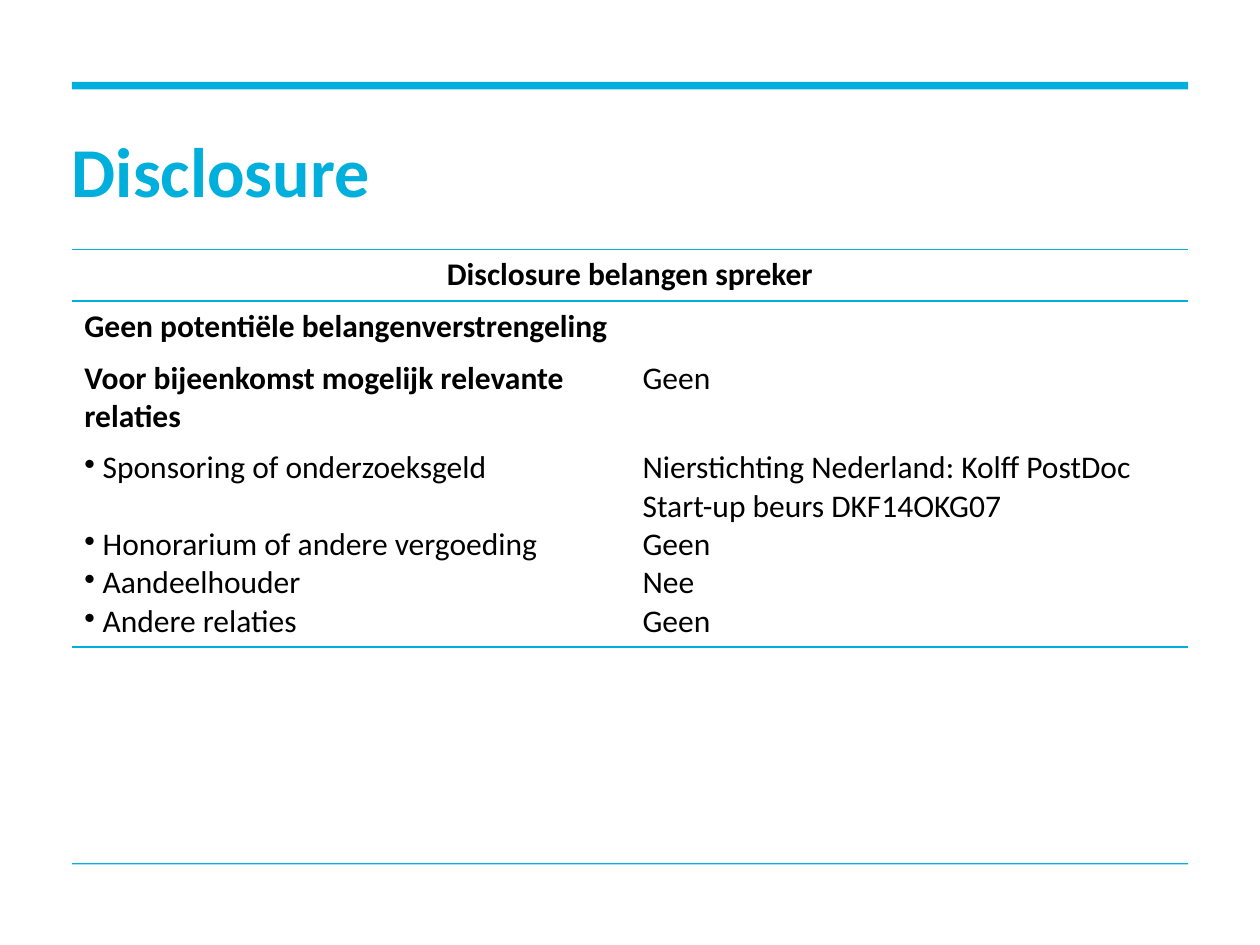
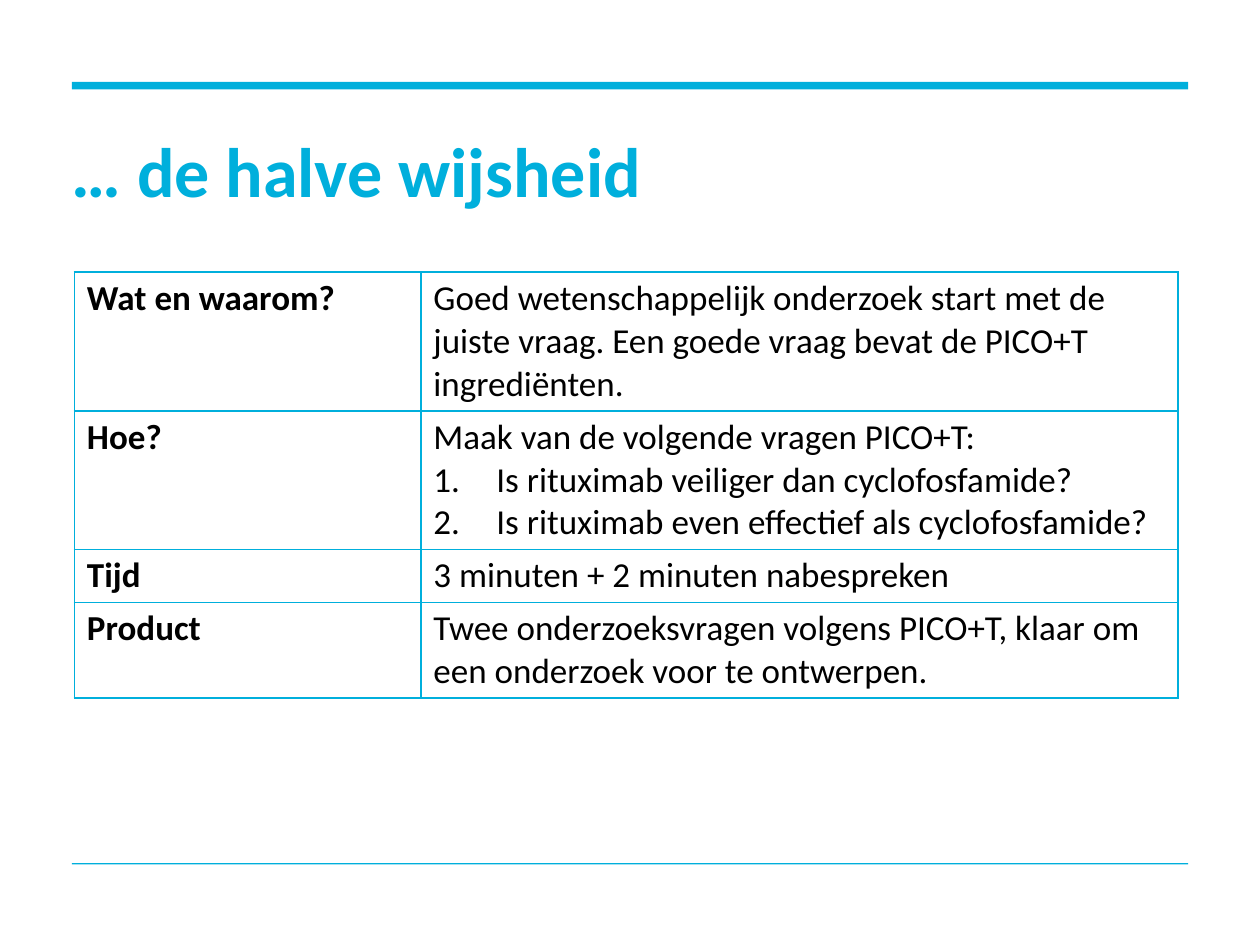
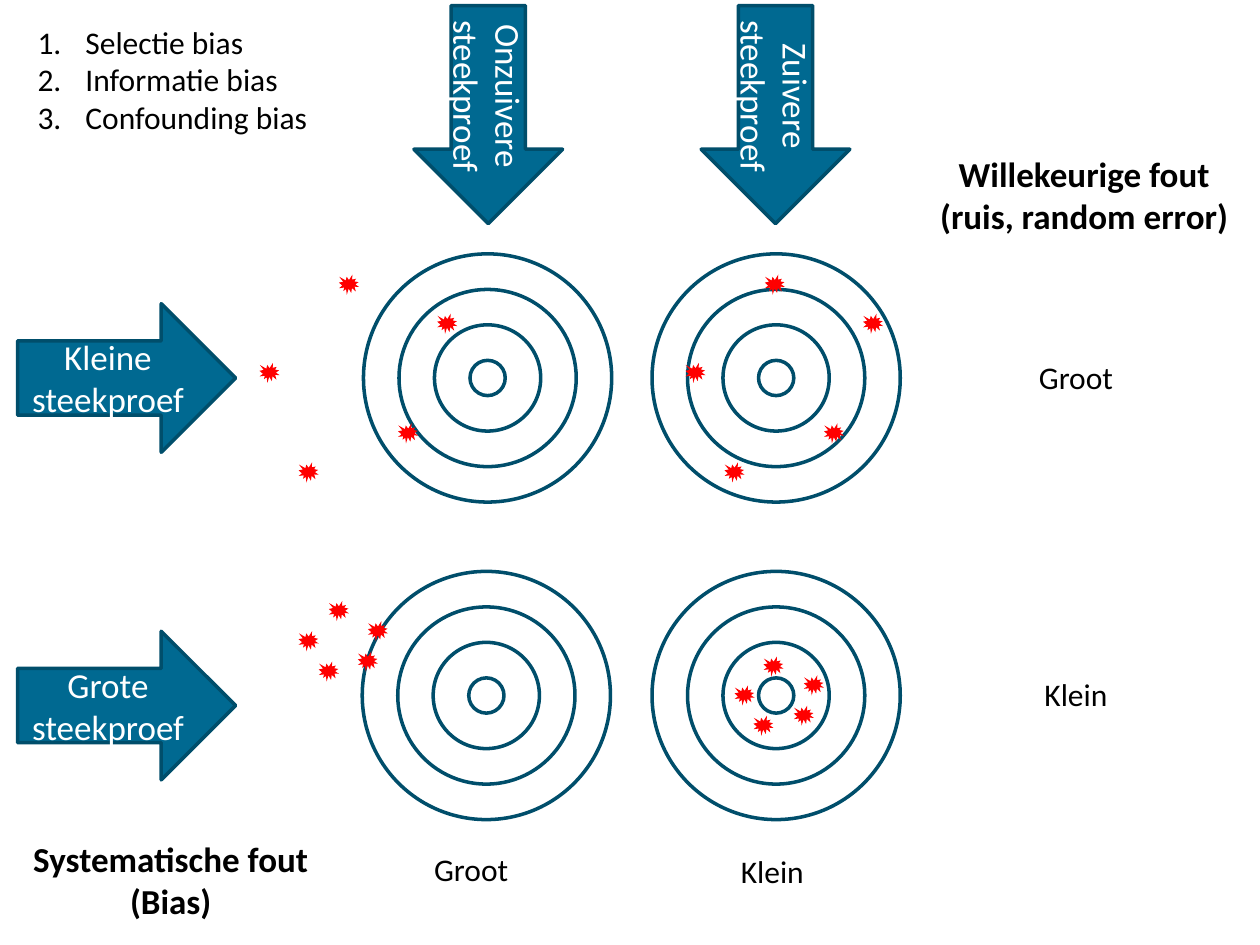
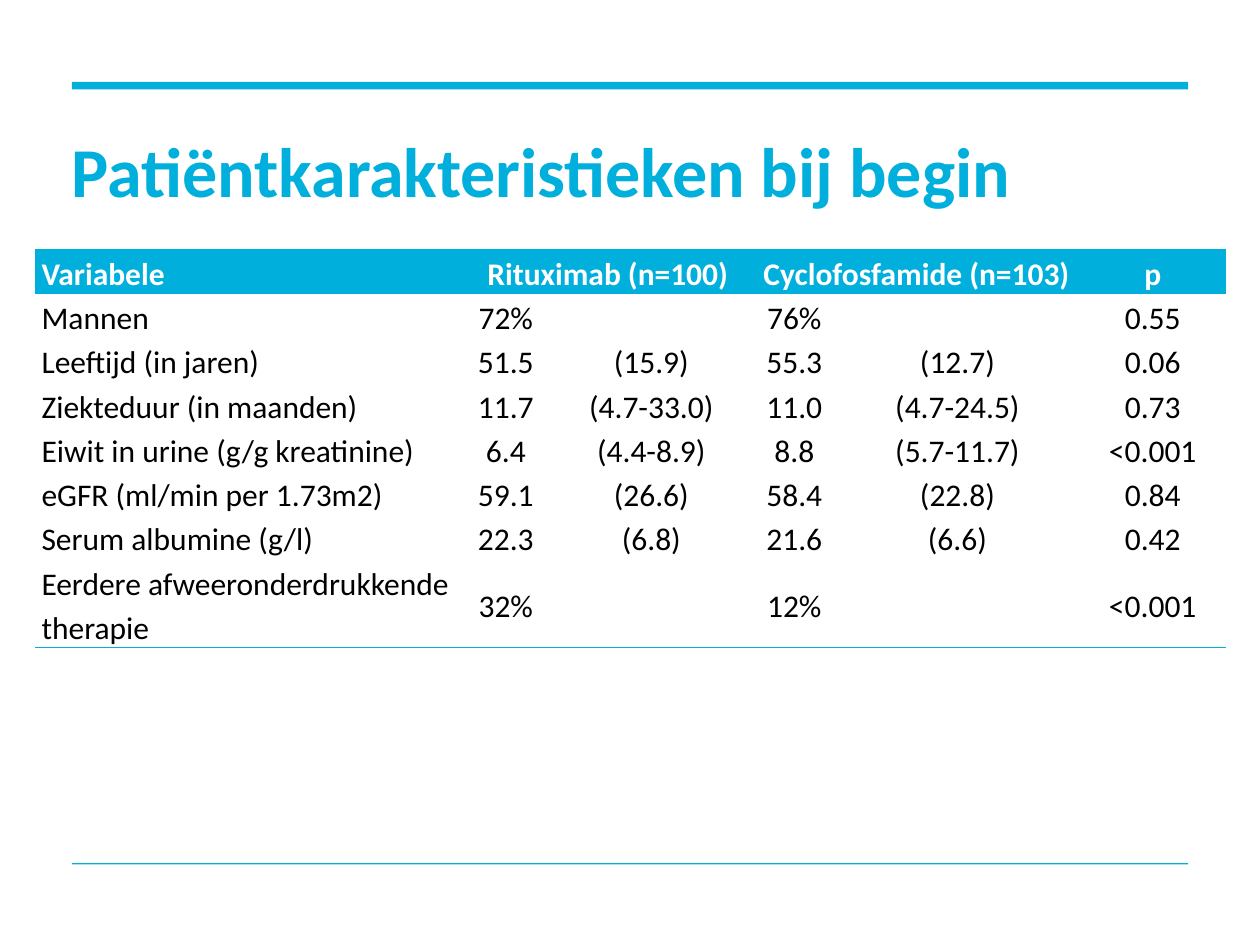
from pptx import Presentation
from pptx.dml.color import RGBColor
from pptx.enum.shapes import MSO_SHAPE
from pptx.enum.text import MSO_ANCHOR, MSO_AUTO_SIZE, PP_ALIGN
from pptx.oxml.ns import qn
from pptx.util import Inches, Pt
from lxml.etree import SubElement

FONT = "Calibri"
CYAN, TEAL, NAVY = "00AFDC", "006991", "004E6B"
RED, BLACK, WHITE = "FF0000", "000000", "FFFFFF"
MARGIN, CONTENT_WIDTH = 0.57, 8.86
TITLE_ONLY, BLANK = 5, 6
PLAIN_TABLE_STYLE = "{2D5ABB26-0587-4C30-8999-92F81FD0307C}"
SIDES = {"left": "a:lnL", "right": "a:lnR", "top": "a:lnT", "bottom": "a:lnB"}


def color(value):
    return RGBColor.from_string(value)


# Text
def set_marker(para, marker, indent):
    """Give a paragraph a bullet character, or numbers when marker is '1.'."""
    properties = para._p.get_or_add_pPr()
    properties.set("marL", str(Inches(indent)))
    properties.set("indent", str(-Inches(indent)))
    if marker == "1.":
        SubElement(properties, qn("a:buAutoNum")).set("type", "arabicPeriod")
    else:
        SubElement(properties, qn("a:buChar")).set("char", marker)


def write(frame, text, size=18, fill=BLACK, bold=False, align=PP_ALIGN.LEFT,
          spacing=None, after=None, marker=None, indent=0):
    """Write one paragraph, taking the empty first one if there is one."""
    para = frame.add_paragraph() if frame.text else frame.paragraphs[0]
    if marker:
        set_marker(para, marker, indent)
    para.alignment = align
    if spacing:
        para.line_spacing = spacing
    if after:
        para.space_after = after
    span = para.add_run()
    span.text = text
    span.font.name, span.font.size, span.font.bold = FONT, Pt(size), bold
    span.font.color.rgb = color(fill)


def add_text(page, left, top, width, height, lines, **style):
    box = page.shapes.add_textbox(Inches(left), Inches(top), Inches(width), Inches(height))
    frame = box.text_frame
    frame.word_wrap = True
    frame.auto_size = MSO_AUTO_SIZE.SHAPE_TO_FIT_TEXT
    for line in lines:
        write(frame, line, **style)


# Shapes
def add_shape(shapes, kind, left, top, width, height, fill=None, line=None):
    shape = shapes.add_shape(kind, Inches(left), Inches(top), Inches(width), Inches(height))
    shape.shadow.inherit = False
    if fill:
        shape.fill.solid()
        shape.fill.fore_color.rgb = color(fill)
    else:
        shape.fill.background()
    if line:
        shape.line.color.rgb = color(line)
        shape.line.width = Pt(2)
    else:
        shape.line.fill.background()
    return shape


def add_target(page, center_x, center_y):
    group = page.shapes.add_group_shape()
    for ring in range(4):
        size = 0.28 + ring * 1.69 / 3
        add_shape(group.shapes, MSO_SHAPE.OVAL, center_x - size / 2, center_y - size / 2,
                  size, size, line=NAVY)


def add_hits(page, spots):
    group = page.shapes.add_group_shape()
    for left, top in spots:
        add_shape(group.shapes, MSO_SHAPE.EXPLOSION1, left, top, 0.16, 0.16, fill=RED)


def add_arrow(page, left, top, text, rotation=0):
    arrow = add_shape(page.shapes, MSO_SHAPE.RIGHT_ARROW, left, top, 1.73, 1.18, TEAL, NAVY)
    arrow.rotation = rotation
    arrow.text_frame.word_wrap = True
    arrow.text_frame.vertical_anchor = MSO_ANCHOR.MIDDLE
    write(arrow.text_frame, text, size=20, fill=WHITE, align=PP_ALIGN.CENTER)


# Tables
def add_table(page, left, top, columns, rows):
    holder = page.shapes.add_table(len(rows), len(columns), Inches(left), Inches(top),
                                   Inches(sum(columns)), Inches(sum(rows)))
    table = holder.table
    table.first_row = table.horz_banding = False
    table._tbl.tblPr.find(qn("a:tableStyleId")).text = PLAIN_TABLE_STYLE
    for column, width in zip(table.columns, columns):
        column.width = Inches(width)
    for row, height in zip(table.rows, rows):
        row.height = Inches(height)
    return table


def fill_cell(cell, fill=None):
    if fill:
        cell.fill.solid()
        cell.fill.fore_color.rgb = color(fill)
    else:
        cell.fill.background()


def set_borders(cell, *sides):
    """Draw thin cyan edges; they must precede the fill in the cell."""
    properties = cell._tc.get_or_add_tcPr()
    for index, side in enumerate(name for name in SIDES if name in sides):
        edge = SubElement(properties, qn(SIDES[side]), w=str(Pt(1)))
        SubElement(SubElement(edge, qn("a:solidFill")), qn("a:srgbClr"), val=CYAN)
        properties.insert(index, edge)


# Pages
def add_titled_page(deck, text):
    page = deck.slides.add_slide(deck.slide_layouts[TITLE_ONLY])
    for top, height in ((0.65, 0.06), (6.85, 0.01)):
        add_shape(page.shapes, MSO_SHAPE.RECTANGLE, MARGIN, top, CONTENT_WIDTH, height, CYAN)
    title = page.shapes.title
    title.left, title.top = Inches(MARGIN), Inches(1.1)
    title.width, title.height = Inches(CONTENT_WIDTH), Inches(0.58)
    frame = title.text_frame
    frame.margin_left = frame.margin_right = frame.margin_top = frame.margin_bottom = 0
    frame.vertical_anchor = MSO_ANCHOR.MIDDLE
    frame.auto_size = MSO_AUTO_SIZE.NONE
    write(frame, text, size=40, fill=CYAN, bold=True, spacing=Pt(42))
    return page


def add_disclosure(deck):
    page = add_titled_page(deck, "Disclosure")
    table = add_table(page, MARGIN, 1.98, [4.43, 4.43], [0.41, 0.41, 0.71, 1.58])
    for cell in table.iter_cells():
        fill_cell(cell)
    for column in range(2):
        set_borders(table.cell(0, column), "top", "bottom")
        set_borders(table.cell(3, column), "bottom")
    table.cell(0, 0).merge(table.cell(0, 1))
    write(table.cell(0, 0).text_frame, "Disclosure belangen spreker", bold=True,
          align=PP_ALIGN.CENTER)
    write(table.cell(1, 0).text_frame, "Geen potentiële belangenverstrengeling", bold=True)
    write(table.cell(2, 0).text_frame, "Voor bijeenkomst mogelijk relevante relaties", bold=True)
    write(table.cell(2, 1).text_frame, "Geen")

    # The first answer takes two lines, so its topic leaves one line free
    relations = [
        (" Sponsoring of onderzoeksgeld",
         "Nierstichting Nederland: Kolff PostDoc Start-up beurs DKF14OKG07", Pt(22)),
        (" Honorarium of andere vergoeding", "Geen", None),
        (" Aandeelhouder", "Nee", None),
        (" Andere relaties", "Geen", None),
    ]
    for topic, answer, after in relations:
        write(table.cell(3, 0).text_frame, topic, marker="•", after=after)
        write(table.cell(3, 1).text_frame, answer)


def add_assignment(deck):
    page = add_titled_page(deck, "… de halve wijsheid")
    rows = [
        ("Wat en waarom?", "Goed wetenschappelijk onderzoek start met de juiste vraag. "
                           "Een goede vraag bevat de PICO+T ingrediënten.", []),
        ("Hoe?", "Maak van de volgende vragen PICO+T:",
         ["Is rituximab veiliger dan cyclofosfamide?",
          "Is rituximab even effectief als cyclofosfamide?"]),
        ("Tijd", "3 minuten + 2 minuten nabespreken", []),
        ("Product", "Twee onderzoeksvragen volgens PICO+T, klaar om een onderzoek "
                    "voor te ontwerpen.", []),
    ]
    table = add_table(page, 0.59, 2.16, [2.75, 6.01], [1.08, 1.08, 0.4, 0.75])
    for cell in table.iter_cells():
        fill_cell(cell)
        set_borders(cell, *SIDES)
        cell.margin_top = cell.margin_bottom = Inches(0.04)
    for index, (label, text, questions) in enumerate(rows):
        write(table.cell(index, 0).text_frame, label, size=20, bold=True)
        frame = table.cell(index, 1).text_frame
        write(frame, text, size=20)
        for question in questions:
            write(frame, question, size=20, marker="1.", indent=0.5)


def add_errors(deck):
    page = deck.slides.add_slide(deck.slide_layouts[BLANK])

    # Targets and their hits
    for center in ((3.87, 3), (6.16, 3), (3.86, 5.52), (6.16, 5.52)):
        add_target(page, *center)
    wide = [(2.69, 2.18), (3.47, 2.49), (3.16, 3.36), (2.06, 2.88), (2.37, 3.67)]
    add_hits(page, wide)
    add_hits(page, [(left + 3.38, top) for left, top in wide])
    add_hits(page, [(2.61, 4.77), (2.92, 4.93), (2.84, 5.17), (2.37, 5.01), (2.53, 5.25)])
    add_hits(page, [(6.06, 5.21), (6.38, 5.36), (6.3, 5.6), (5.83, 5.44), (5.98, 5.68)])

    # Sample arrows
    add_arrow(page, 0.14, 2.41, "Kleine steekproef")
    add_arrow(page, 0.14, 5.01, "Grote steekproef")
    add_arrow(page, 3.01, 0.32, "Onzuivere steekproef", rotation=90)
    add_arrow(page, 5.29, 0.32, "Zuivere steekproef", rotation=90)

    # Error labels
    headings = [(-0.12, 6.6, "Systematische fout", "(Bias)"),
                (7.13, 1.16, "Willekeurige fout", "(ruis, random error)")]
    for left, top, *lines in headings:
        add_text(page, left, top, 2.95, 0.77, lines, size=20, bold=True, align=PP_ALIGN.CENTER)
    sizes = [(3.11, 6.7, "Groot"), (5.5, 6.71, "Klein"),
             (7.91, 2.79, "Groot"), (7.91, 5.31, "Klein")]
    for left, top, label in sizes:
        add_text(page, left, top, 1.26, 0.4, [label], align=PP_ALIGN.CENTER)
    add_text(page, 0.2, 0.13, 2.6, 1.01, ["Selectie bias", "Informatie bias", "Confounding bias"],
             marker="1.", indent=0.38)


def add_patients(deck):
    page = add_titled_page(deck, "Patiëntkarakteristieken bij begin")
    rows = [
        ("Variabele", "Rituximab (n=100)", "", "Cyclofosfamide (n=103)", "", "p"),
        ("Mannen", "72%", "", "76%", "", "0.55"),
        ("Leeftijd (in jaren)", "51.5", "(15.9)", "55.3", "(12.7)", "0.06"),
        ("Ziekteduur (in maanden)", "11.7", "(4.7-33.0)", "11.0", "(4.7-24.5)", "0.73"),
        ("Eiwit in urine (g/g kreatinine)", "6.4", "(4.4-8.9)", "8.8", "(5.7-11.7)", "<0.001"),
        ("eGFR (ml/min per 1.73m2)", "59.1", "(26.6)", "58.4", "(22.8)", "0.84"),
        ("Serum albumine (g/l)", "22.3", "(6.8)", "21.6", "(6.6)", "0.42"),
        ("Eerdere afweeronderdrukkende therapie", "32%", "", "12%", "", "<0.001"),
    ]
    last = len(rows) - 1
    table = add_table(page, 0.28, 1.98, [3.39, 0.69, 1.62, 0.65, 1.94, 1.16],
                      [0.34] * last + [0.7])
    for row, values in enumerate(rows):
        header = row == 0
        for column, value in enumerate(values):
            cell = table.cell(row, column)
            cell.margin_left = cell.margin_right = Inches(0.05)
            cell.margin_top = cell.margin_bottom = 0
            cell.vertical_anchor = MSO_ANCHOR.MIDDLE if row == last else MSO_ANCHOR.BOTTOM
            fill_cell(cell, CYAN if header else WHITE)
            if header:
                set_borders(cell, "top")
            elif row == last:
                set_borders(cell, "bottom")
            if value:
                write(cell.text_frame, value, fill=WHITE if header else BLACK, bold=header,
                      align=PP_ALIGN.CENTER if column else PP_ALIGN.LEFT, spacing=1.15)
    for column in (1, 3):
        table.cell(0, column).merge(table.cell(0, column + 1))


def main():
    deck = Presentation()
    deck.slide_width, deck.slide_height = Inches(10), Inches(7.5)
    add_disclosure(deck)
    add_assignment(deck)
    add_errors(deck)
    add_patients(deck)
    deck.save("out.pptx")


if __name__ == "__main__":
    main()
